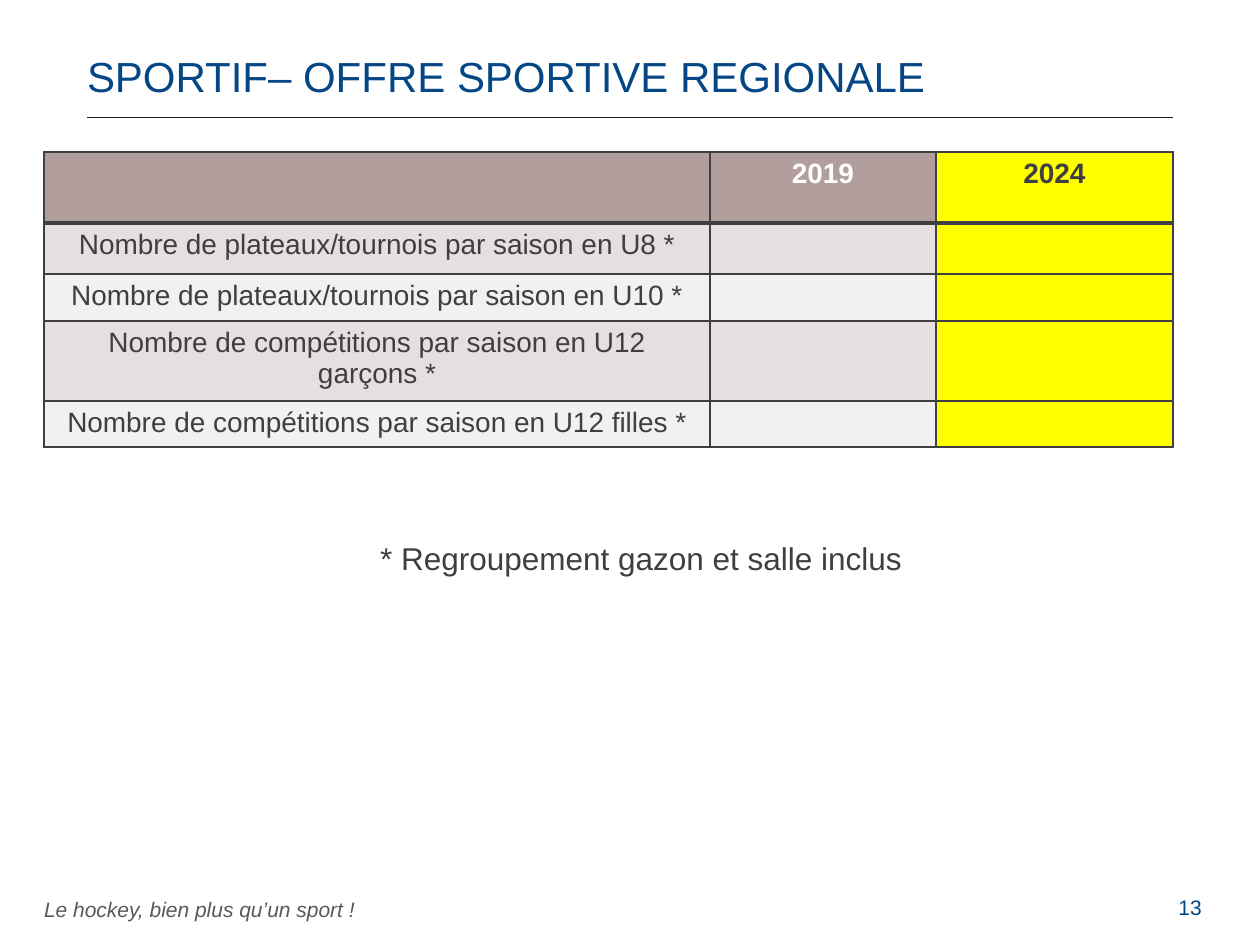
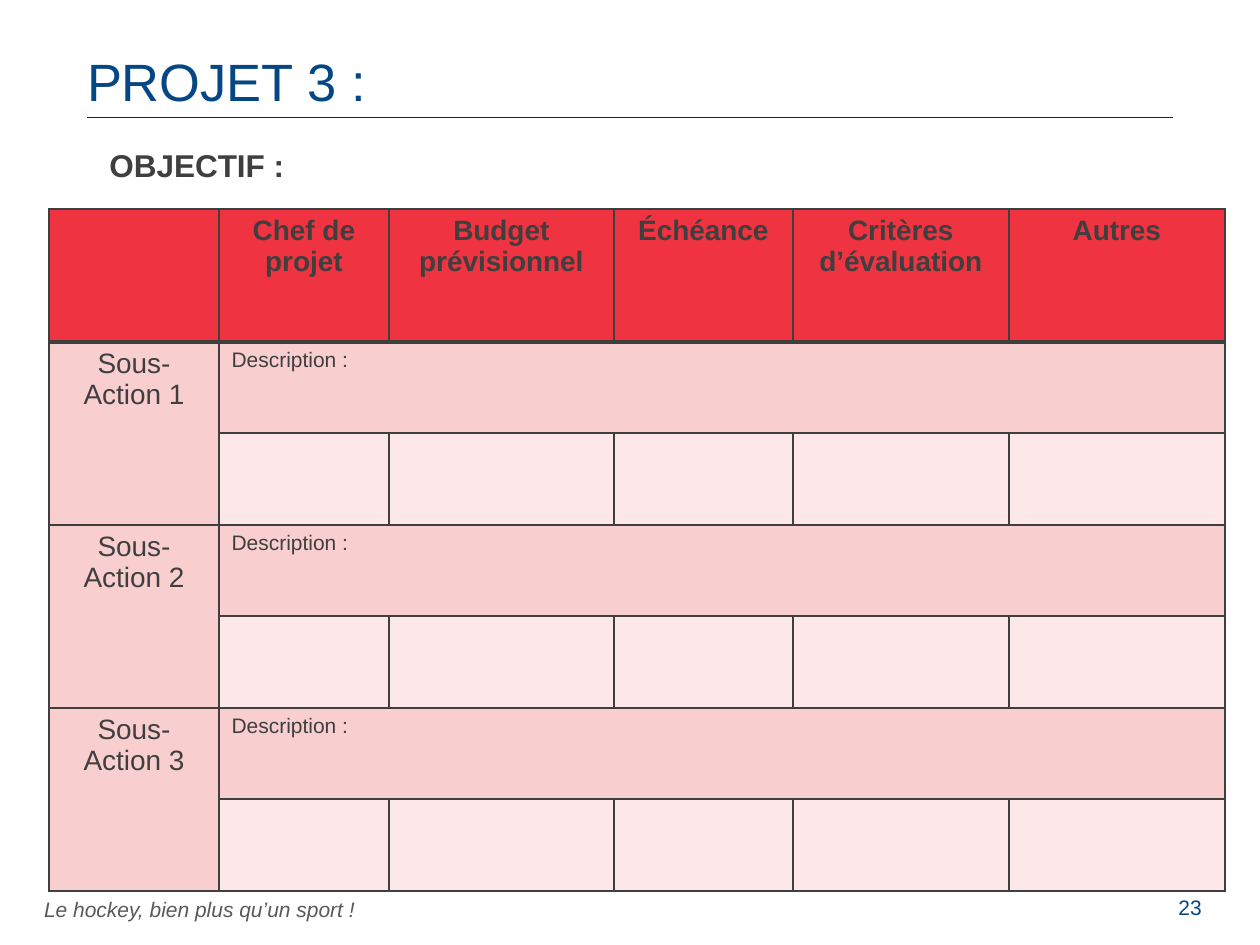
from lxml import etree
from pptx import Presentation
from pptx.dml.color import RGBColor
from pptx.enum.shapes import MSO_CONNECTOR
from pptx.enum.text import MSO_ANCHOR, MSO_AUTO_SIZE, PP_ALIGN
from pptx.oxml.ns import qn
from pptx.util import Pt

LEFT, CENTER, JUSTIFY = PP_ALIGN.LEFT, PP_ALIGN.CENTER, PP_ALIGN.JUSTIFY
TOP, MIDDLE = MSO_ANCHOR.TOP, MSO_ANCHOR.MIDDLE
STRAIGHT = MSO_CONNECTOR.STRAIGHT
NO_FIT = MSO_AUTO_SIZE.NONE

PX = 914400 / 126
FONT = "Arial"
C = {
    "blue": "054684", "text": "3F3F3F", "footer": "595959", "rule": "202020",
    "white": "FFFFFF", "yellow": "FFFF00",
    "mauve": "B39E9E", "mauve_mid": "E5DFDF", "mauve_light": "F2F0F0",
    "red": "EF3340", "red_mid": "F9CECF", "red_light": "FCE8E8",
}


def add_text(tf, text, size, color, align=LEFT, bold=False, italic=False):
    p = tf.paragraphs[0]
    p.alignment = align
    r = p.add_run()
    r.text = text
    r.font.name, r.font.size = FONT, Pt(size)
    r.font.bold, r.font.italic = bold, italic
    r.font.color.rgb = RGBColor.from_string(C[color])
    return p


def add_grid(s, left, top, cols, rows, fills):
    """Table with dark borders, thick under the header; fills is one list per row."""
    box = [round(v * PX) for v in (left, top, sum(cols), sum(rows))]
    table = s.shapes.add_table(len(rows), len(cols), *box).table
    table.first_row = table.horz_banding = False
    for col, width in zip(table.columns, cols):
        col.width = round(width * PX)
    for i, height in enumerate(rows):
        table.rows[i].height = round(height * PX)
        for j in range(len(cols)):
            cell = table.cell(i, j)
            tcPr = cell._tc.get_or_add_tcPr()
            for side in "LRTB":
                thick = (i, side) in ((0, "B"), (1, "T"))
                ln = etree.SubElement(tcPr, qn("a:ln" + side), w=str(Pt(3 if thick else 1)))
                solid = etree.SubElement(ln, qn("a:solidFill"))
                etree.SubElement(solid, qn("a:srgbClr"), val=C["text"])
            cell.fill.solid()
            cell.fill.fore_color.rgb = RGBColor.from_string(C[fills[i][j]])
            # Empty cells keep a small line height
            etree.SubElement(cell.text_frame.paragraphs[0]._p, qn("a:endParaRPr"), sz="1200")
    return table


prs = Presentation()
prs.slide_width, prs.slide_height = round(1260 * PX), round(945 * PX)

# Shared title, rule, footer and page number
slides = []
for title, size, number in (("SPORTIF– OFFRE SPORTIVE REGIONALE", 24, "13"),
                            ("PROJET 3 :", 30, "23")):
    s = prs.slides.add_slide(prs.slide_layouts[5])
    slides.append(s)

    sp = s.shapes.title
    sp.left, sp.top, sp.width, sp.height = [round(v * PX) for v in (87, 50, 1086, 66)]
    tf = sp.text_frame
    tf.margin_left, tf.vertical_anchor = 0, TOP
    tf.word_wrap, tf.auto_size = True, NO_FIT
    add_text(tf, title, size, "blue").line_spacing = 0.9

    rule = s.shapes.add_connector(STRAIGHT, *[round(v * PX) for v in (87, 117, 1173, 117)])
    rule.line.color.rgb = RGBColor.from_string(C["rule"])
    rule.line.width = Pt(0.5)
    etree.SubElement(rule._element.spPr, qn("a:effectLst"))

    tf = s.shapes.add_textbox(*[round(v * PX) for v in (44, 897, 360, 25)]).text_frame
    tf.margin_left = tf.margin_right = tf.margin_top = tf.margin_bottom = 0
    tf.word_wrap, tf.vertical_anchor = True, MIDDLE
    add_text(tf, "Le hockey, bien plus qu’un sport !", 12, "footer", italic=True)

    tf = s.shapes.add_textbox(*[round(v * PX) for v in (1166, 888, 59, 50)]).text_frame
    tf.word_wrap = True
    add_text(tf, number, 12, "blue")

offer, project = slides

# Regional offer: indicators by year
labels = [
    "Nombre de plateaux/tournois par saison en U8 *",
    "Nombre de plateaux/tournois par saison en U10 *",
    "Nombre de compétitions par saison en U12 garçons *",
    "Nombre de compétitions par saison en U12 filles *",
]
fills = [[shade, shade, "yellow"]
         for shade in ["mauve"] + ["mauve_mid", "mauve_light"] * 2]
table = add_grid(offer, 44, 152, [666, 226, 237], [71, 51, 47, 47, 45], fills)
add_text(table.cell(0, 1).text_frame, "2019", 16, "white", CENTER, bold=True)
add_text(table.cell(0, 2).text_frame, "2024", 16, "text", CENTER, bold=True)
for i, label in enumerate(labels, 1):
    add_text(table.cell(i, 0).text_frame, label, 16, "text", CENTER)

tf = offer.shapes.add_textbox(*[round(v * PX) for v in (268, 533, 746, 50)]).text_frame
tf.word_wrap = True
add_text(tf, "* Regroupement gazon et salle inclus", 18, "text", CENTER)

# Project: header, then a description row and a detail row per sub-action
headers = ["Chef de projet", "Budget prévisionnel", "Échéance",
           "Critères d’évaluation", "Autres"]
fills = [["red"] * 6] + [["red_mid"] * 6, ["red_mid"] + ["red_light"] * 5] * 3
table = add_grid(project, 49, 209, [170, 170, 225, 179, 216, 216], [133] + [91, 92] * 3, fills)
for j, header in enumerate(headers, 1):
    add_text(table.cell(0, j).text_frame, header, 16, "text", CENTER, bold=True)
for n in (1, 2, 3):
    i = 2 * n - 1
    table.cell(i, 0).merge(table.cell(i + 1, 0))
    table.cell(i, 1).merge(table.cell(i, 5))
    add_text(table.cell(i, 0).text_frame, f"Sous-Action {n}", 16, "text", CENTER)
    add_text(table.cell(i, 1).text_frame, "Description :", 12, "text", JUSTIFY)

tf = project.shapes.add_textbox(*[round(v * PX) for v in (97, 140, 910, 50)]).text_frame
tf.word_wrap = True
add_text(tf, "OBJECTIF :", 18, "text", bold=True)

prs.save("out.pptx")
